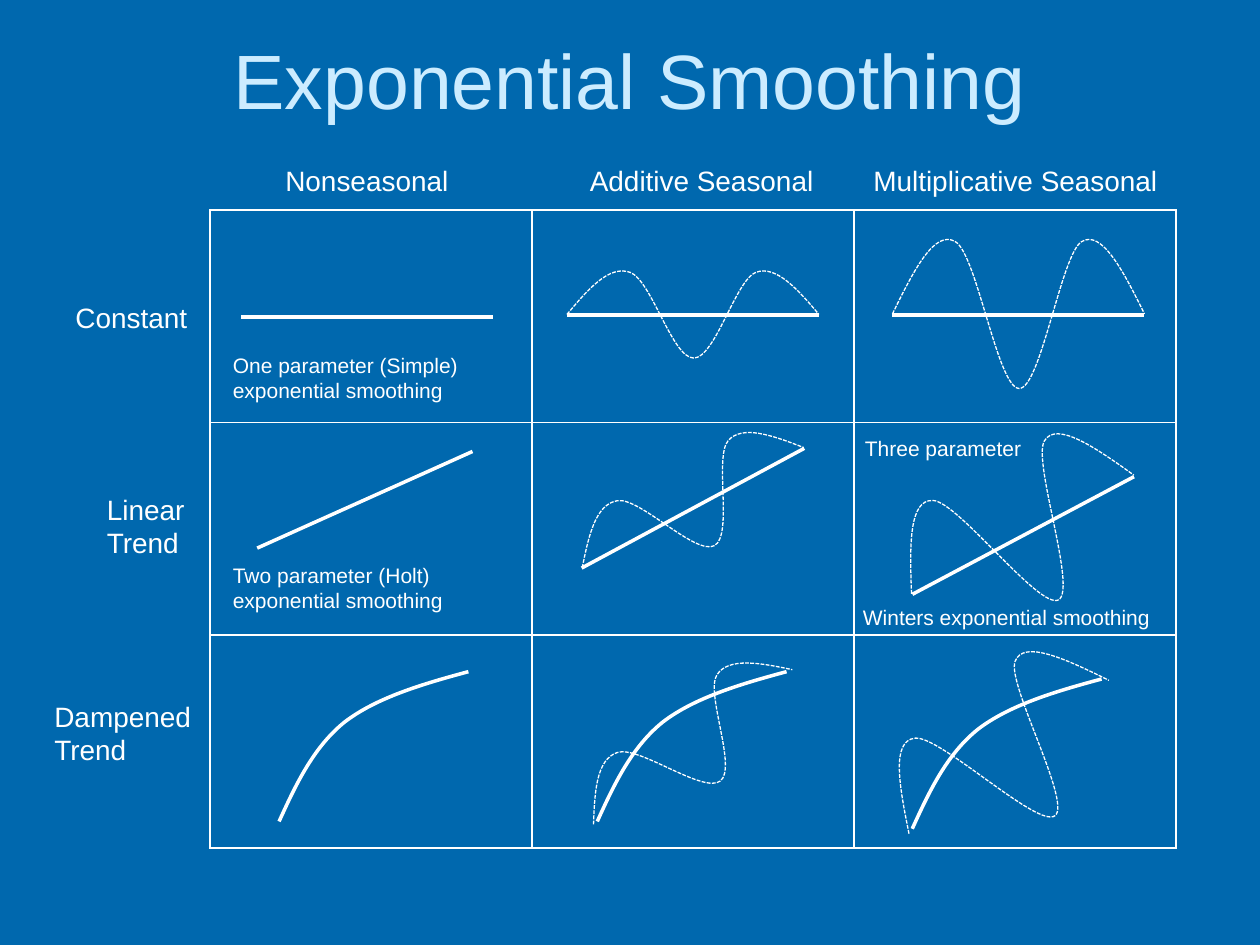
from dataclasses import dataclass
from typing import NamedTuple

from lxml.etree import SubElement
from pptx import Presentation
from pptx.dml.color import RGBColor
from pptx.enum.dml import MSO_LINE
from pptx.enum.shapes import MSO_CONNECTOR
from pptx.enum.text import MSO_ANCHOR, MSO_AUTO_SIZE, PP_ALIGN
from pptx.oxml.ns import qn
from pptx.slide import Slide
from pptx.util import Inches, Length, Pt


@dataclass(frozen=True)
class Theme:
    font: str = "Arial"
    background: RGBColor = RGBColor(0x00, 0x68, 0xAE)
    title: RGBColor = RGBColor(0xCC, 0xEC, 0xFF)
    ink: RGBColor = RGBColor(0xFF, 0xFF, 0xFF)
    title_size: float = 44
    label_size: float = 16
    note_size: float = 12
    border_width: float = 1
    trend_width: float = 2
    season_width: float = 0.75


class Box(NamedTuple):
    """An area of the slide grid, in columns and rows."""
    column: float
    row: float
    columns: float
    rows: float


class Label(NamedTuple):
    text: str
    box: Box
    size: float
    wrap: bool = True


class Line(NamedTuple):
    start: tuple[float, float]
    end: tuple[float, float]


class Curve(NamedTuple):
    """A start point and Bezier triples, in thousandths of the curve's box."""
    start: tuple[int, int]
    segments: list[list[tuple[int, int]]]


class Plot(NamedTuple):
    curve: Curve
    box: Box
    rotation: float = 0
    seasonal: bool = True


THEME = Theme()
CELLS_PER_INCH = 12
CURVE_UNITS = 1000

TITLE = Box(6, 1, 108, 13)
MATRIX = Box(20, 20, 92, 60.75)
MATRIX_SIZE = 3

LABELS = [
    Label("Nonseasonal", Box(26, 15, 24, 4.4), THEME.label_size),
    Label("Additive Seasonal", Box(55, 15, 24, 4.4), THEME.label_size),
    Label("Multiplicative Seasonal", Box(82, 15, 31, 4.4), THEME.label_size),
    Label("Constant", Box(6, 28, 14, 4.4), THEME.label_size),
    Label("Linear\nTrend", Box(9, 46.3, 14, 7.7), THEME.label_size),
    Label("Dampened\nTrend", Box(4, 66, 17, 7.7), THEME.label_size),
    Label("One parameter (Simple) exponential smoothing", Box(21, 33, 29, 6), THEME.note_size),
    Label("Two parameter (Holt) exponential smoothing", Box(21, 53, 29, 6), THEME.note_size),
    Label("Winters exponential smoothing", Box(81, 57, 29.9, 3.6), THEME.note_size, False),
    Label("Three parameter", Box(81.2, 40.9, 18, 3.6), THEME.note_size, False),
]

TRENDS = [
    Line((23, 30.2), (47, 30.2)),
    Line((54, 30), (78, 30)),
    Line((85, 30), (109, 30)),
    Line((24.5, 52.2), (45, 43)),
    Line((55.4, 54.1), (76.6, 42.7)),
    Line((86.9, 56.6), (108, 45.4)),
]

WAVE = Curve((0, 500), [
    [(83, 213), (167, -70), (250, 16)],
    [(335, 102), (418, 1000), (503, 1000)],
    [(588, 1000), (670, 102), (750, 16)],
    [(830, -70), (917, 215), (1000, 500)],
])
DAMPENED = Curve((0, 1000), [
    [(110, 700), (226, 388), (393, 219)],
    [(558, 61), (776, 24), (1000, 0)],
])

PLOTS = [
    Plot(WAVE, Box(54, 25.8, 24, 8.3)),
    Plot(WAVE, Box(85, 22.8, 24, 14.2)),
    Plot(WAVE, Box(54, 44.2, 24, 8.3), 331.5),
    Plot(WAVE, Box(85.4, 43.8, 24, 14.2), 331.9),
    Plot(WAVE, Box(54, 67, 24, 8.3), 322.1),
    Plot(WAVE, Box(84.1, 65, 24, 14.2), 322.5),
    *(Plot(DAMPENED, Box(column, row, 20.6, 10.2), 348, seasonal=False)
      for column, row in [(25.3, 66), (55.6, 66), (85.6, 66.7)]),
]


def grid(cells: float) -> Length:
    return Inches(cells / CELLS_PER_INCH)


def add_text(slide: Slide, text: str, box: Box, *, size: float,
             color: RGBColor = THEME.ink, align: PP_ALIGN = PP_ALIGN.LEFT,
             anchor: MSO_ANCHOR = MSO_ANCHOR.TOP, wrap: bool = True) -> None:
    frame = slide.shapes.add_textbox(*map(grid, box)).text_frame
    frame.word_wrap = wrap
    frame.auto_size = MSO_AUTO_SIZE.NONE
    frame.vertical_anchor = anchor
    frame.text = text
    for paragraph in frame.paragraphs:
        paragraph.alignment = align
        paragraph.font.name = THEME.font
        paragraph.font.size = Pt(size)
        paragraph.font.color.rgb = color


def add_matrix(slide: Slide) -> None:
    table = slide.shapes.add_table(MATRIX_SIZE, MATRIX_SIZE, *map(grid, MATRIX)).table
    table.first_row = table.horz_banding = False
    for column in table.columns:
        column.width = grid(MATRIX.columns / MATRIX_SIZE)
    for row in table.rows:
        row.height = grid(MATRIX.rows / MATRIX_SIZE)
    for cell in table.iter_cells():
        properties = cell._tc.get_or_add_tcPr()
        for side in ("a:lnL", "a:lnR", "a:lnT", "a:lnB"):
            border = SubElement(properties, qn(side), w=str(Pt(THEME.border_width)))
            fill = SubElement(border, qn("a:solidFill"))
            SubElement(fill, qn("a:srgbClr"), val=str(THEME.ink))
        cell.fill.background()


def add_trend(slide: Slide, line: Line) -> None:
    connector = slide.shapes.add_connector(
        MSO_CONNECTOR.STRAIGHT, *map(grid, line.start + line.end))
    connector.line.color.rgb = THEME.ink
    connector.line.width = Pt(THEME.trend_width)
    SubElement(connector._element.spPr, qn("a:effectLst"))


def add_curve(slide: Slide, plot: Plot) -> None:
    """Build a freeform, then turn its straight segments into Bezier ones."""
    builder = slide.shapes.build_freeform(*plot.curve.start)
    builder.add_line_segments([segment[-1] for segment in plot.curve.segments], close=False)
    shape = builder.convert_to_shape()
    outline = next(shape._element.iter(qn("a:path")))
    outline.set("w", str(CURVE_UNITS))
    outline.set("h", str(CURVE_UNITS))
    for command in list(outline):
        outline.remove(command)
    commands = [("a:moveTo", [plot.curve.start])]
    commands += [("a:cubicBezTo", segment) for segment in plot.curve.segments]
    for name, points in commands:
        command = SubElement(outline, qn(name))
        for x, y in points:
            SubElement(command, qn("a:pt"), x=str(x), y=str(y))

    shape.left, shape.top, shape.width, shape.height = map(grid, plot.box)
    shape.rotation = plot.rotation
    shape.shadow.inherit = False
    shape.fill.background()
    shape.line.color.rgb = THEME.ink
    shape.line.width = Pt(THEME.season_width if plot.seasonal else THEME.trend_width)
    if plot.seasonal:
        shape.line.dash_style = MSO_LINE.SQUARE_DOT


def main() -> None:
    presentation = Presentation()
    presentation.slide_width, presentation.slide_height = Inches(10), Inches(7.5)
    slide = presentation.slides.add_slide(presentation.slide_layouts[6])
    slide.background.fill.solid()
    slide.background.fill.fore_color.rgb = THEME.background

    add_text(slide, "Exponential Smoothing", TITLE, size=THEME.title_size,
             color=THEME.title, align=PP_ALIGN.CENTER, anchor=MSO_ANCHOR.MIDDLE)
    add_matrix(slide)
    for line in TRENDS:
        add_trend(slide, line)
    for plot in PLOTS:
        add_curve(slide, plot)
    for label in LABELS:
        add_text(slide, label.text, label.box, size=label.size, wrap=label.wrap)
    presentation.save("out.pptx")


if __name__ == "__main__":
    main()
